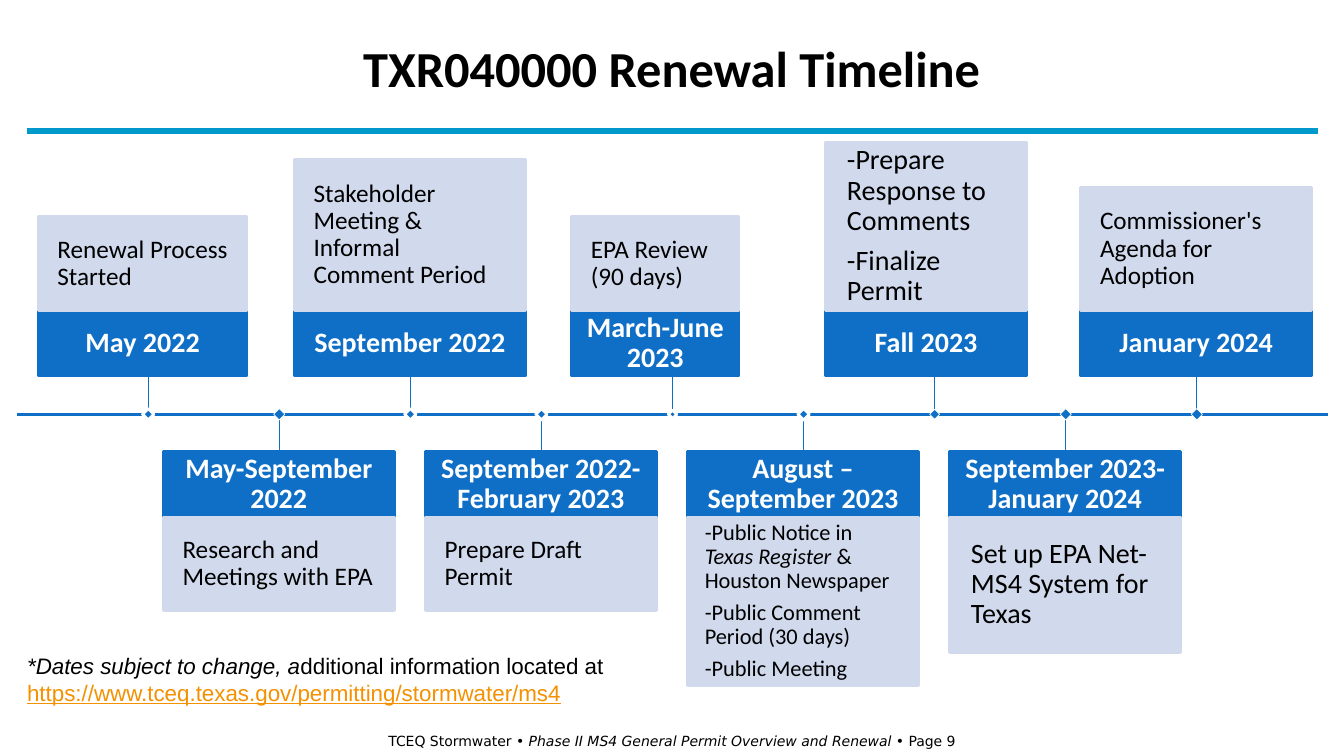
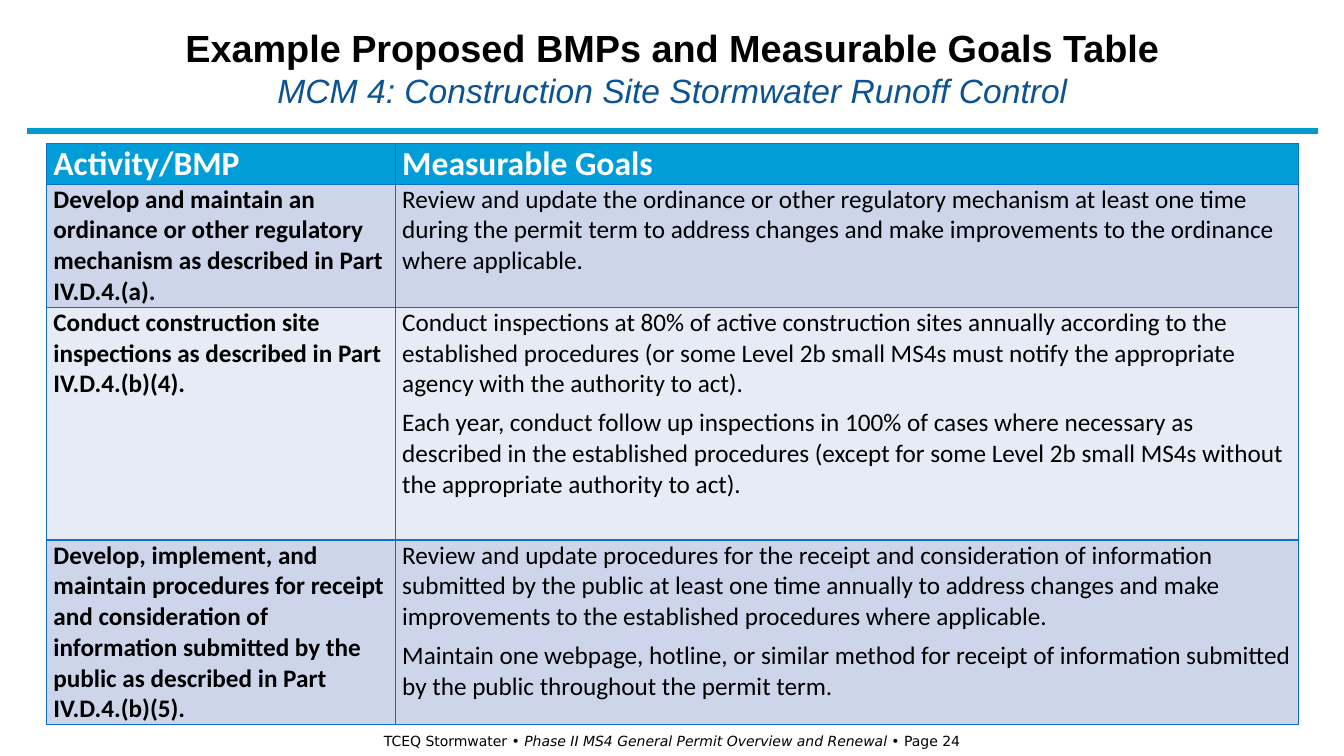
"""Build two stormwater permit slides: a renewal timeline and a goals table."""
from lxml.etree import SubElement
from pptx import Presentation
from pptx.dml.color import RGBColor
from pptx.enum.shapes import MSO_CONNECTOR, MSO_SHAPE
from pptx.enum.text import MSO_ANCHOR, MSO_AUTO_SIZE, PP_ALIGN
from pptx.oxml.ns import qn
from pptx.util import Inches, Pt

HUES = {
    "black": "000000", "white": "FFFFFF", "rule": "0099CC", "blue": "0F6FC6",
    "pale": "D1D9EC", "head": "009DD9", "odd": "CCD5EA", "even": "E7EBF5",
    "navy": "0B5394", "link": "F49100",
}


def hue(name):
    return RGBColor.from_string(HUES[name])


def write(frame, paras, align=PP_ALIGN.LEFT, lead=1.0, after=0, inset=(0.1, 0.05),
          anchor=None, **base):
    frame.word_wrap = True
    frame.auto_size = MSO_AUTO_SIZE.NONE
    frame.margin_left = frame.margin_right = Inches(inset[0])
    frame.margin_top = frame.margin_bottom = Inches(inset[1])
    if anchor is not None:
        frame.vertical_anchor = anchor
    fill(frame, paras, align, lead, after, **base)


def fill(frame, paras, align=PP_ALIGN.LEFT, lead=1.0, after=0, **base):
    for spot, runs in enumerate(paras):
        para = frame.add_paragraph() if spot else frame.paragraphs[0]
        para.alignment, para.line_spacing = align, lead
        para.space_before, para.space_after = Pt(0), Pt(after)
        for item in [runs] if isinstance(runs, str) else runs:
            words, extra = (item, {}) if isinstance(item, str) else item
            look = {"size": 18, "face": "Calibri", "tint": "black", "bold": False,
                    "slant": False, "under": False, **base, **extra}
            run = para.add_run()
            run.text = words
            font = run.font
            font.size, font.name = Pt(look["size"]), look["face"]
            font.bold, font.italic = look["bold"], look["slant"]
            font.underline = look["under"]
            font.color.rgb = hue(look["tint"])


class Deck:
    def __init__(self):
        self.show = Presentation()
        self.show.slide_width, self.show.slide_height = Inches(13.33), Inches(7.5)
        self.slide = None

    def page(self, number, title, left, width, **look):
        self.slide = self.show.slides.add_slide(self.show.slide_layouts[5])
        self.line(0.27, 1.3, 13.07, 1.3, "rule", 4.5)
        self.text(0, 7.22, 13.33, 0.27, [[
            "TCEQ Stormwater • ",
            ("Phase II MS4 General Permit Overview and Renewal ", {"slant": True}),
            f"• Page {number}"]],
            align=PP_ALIGN.CENTER, size=10, face="DejaVu Sans")
        head = self.slide.shapes.title
        head.left, head.top = Inches(left), Inches(0.17)
        head.width, head.height = Inches(width), Inches(1)
        write(head.text_frame, title, align=PP_ALIGN.CENTER,
              anchor=MSO_ANCHOR.MIDDLE, bold=True, **look)

    def text(self, left, top, width, height, paras, **look):
        box = self.slide.shapes.add_textbox(
            Inches(left), Inches(top), Inches(width), Inches(height))
        write(box.text_frame, paras, **look)

    def line(self, left, top, right, low, tint, weight):
        line = self.slide.shapes.add_connector(
            MSO_CONNECTOR.STRAIGHT, Inches(left), Inches(top), Inches(right), Inches(low))
        line.line.color.rgb, line.line.width = hue(tint), Pt(weight)
        SubElement(line._element.spPr, qn("a:effectLst"))

    def rect(self, left, top, width, height, tint, edge, weight=2):
        rect = self.slide.shapes.add_shape(
            MSO_SHAPE.RECTANGLE, Inches(left), Inches(top), Inches(width), Inches(height))
        rect.shadow.inherit = False
        rect.fill.solid()
        rect.fill.fore_color.rgb = hue(tint)
        rect.line.color.rgb, rect.line.width = hue(edge), Pt(weight)
        return rect

    def stage(self, mid, above, date, notes, tall, left=None, width=2.29, size=18):
        left = mid - 1.15 if left is None else left
        bar_top, box_top = (3.08, 3.08 - tall) if above else (4.48, 5.13)
        bar = self.rect(left, bar_top, width, 0.65, "blue", "blue")
        write(bar.text_frame, [date], align=PP_ALIGN.CENTER, lead=0.9, inset=(0.11, 0.11),
              anchor=MSO_ANCHOR.MIDDLE, size=20, tint="white", bold=True)
        box = self.rect(left, box_top, width, tall, "pale", "pale")
        pad = round(size * 0.0105, 2)
        write(box.text_frame, notes, lead=0.9, after=size * 0.35, inset=(pad, pad),
              anchor=MSO_ANCHOR.MIDDLE, size=size)
        ends = (3.73, 4.11) if above else (4.11, 4.48)
        self.line(mid, ends[0], mid, ends[1], "blue", 0.75)

    def node(self, mid, side, weight):
        node = self.rect(mid - side / 2, 4.11 - side / 2, side, side, "blue", "white", weight)
        node.rotation = 45

    def table(self, left, top, wide, tall, rows):
        grid = self.slide.shapes.add_table(
            len(rows), len(wide), Inches(left), Inches(top),
            Inches(sum(wide)), Inches(sum(tall))).table
        for col, width in zip(grid.columns, wide):
            col.width = Inches(width)
        for i, row in enumerate(rows):
            grid.rows[i].height = Inches(tall[i])
            for j, paras in enumerate(row):
                back = "even" if i % 2 == 0 else "odd"
                look = {"bold": j == 0}
                if i == 0:
                    back = "head"
                    look = {"bold": True, "size": 24, "tint": "white"}
                self.cell(grid.cell(i, j), paras, back, **look)

    def cell(self, cell, paras, back, **look):
        cell.margin_left = cell.margin_right = Inches(0.07)
        cell.margin_top = cell.margin_bottom = 0
        props = cell._tc.get_or_add_tcPr()
        for side in ("lnL", "lnR", "lnT", "lnB"):
            edge = SubElement(props, qn(f"a:{side}"), w=str(int(Pt(1))))
            paint = SubElement(edge, qn("a:solidFill"))
            SubElement(paint, qn("a:srgbClr"), val=HUES["blue"])
        cell.fill.solid()
        cell.fill.fore_color.rgb = hue(back)
        fill(cell.text_frame, paras, after=6, **look)


STEPS = [
    ("May 2022", ["Renewal Process Started"], 0.93, {"left": 0.38, "width": 2.07}),
    ("May-September 2022", ["Research and Meetings with EPA"], 0.93, {}),
    ("September 2022", ["Stakeholder Meeting & Informal Comment Period"], 1.5, {}),
    ("September 2022-February 2023", ["Prepare Draft Permit"], 0.93, {}),
    ("March-June 2023", ["EPA Review (90 days)"], 0.93, {"left": 5.67, "width": 1.66}),
    ("August – September 2023",
     [["-Public Notice in ", ("Texas Register", {"slant": True}), " & Houston Newspaper"],
      "-Public Comment Period (30 days)", "-Public Meeting"], 1.67, {"size": 16}),
    ("Fall 2023", ["-Prepare Response to Comments", "-Finalize Permit"], 1.67,
     {"left": 8.19, "width": 1.99, "size": 20}),
    ("September 2023-January 2024", ["Set up EPA Net-MS4 System for Texas"], 1.34,
     {"size": 20}),
    ("January 2024", ["Commissioner's Agenda for Adoption"], 1.22, {}),
]
SIDES = {4: 0.06, 6: 0.07}
THIN = {1, 6, 7, 8}

GOALS = [
    (["Activity/BMP"], ["Measurable Goals"]),
    (["Develop and maintain an ordinance or other regulatory mechanism as described in "
      "Part IV.D.4.(a)."],
     ["Review and update the ordinance or other regulatory mechanism at least one time "
      "during the permit term to address changes and make improvements to the ordinance "
      "where applicable."]),
    (["Conduct construction site inspections as described in Part IV.D.4.(b)(4)."],
     ["Conduct inspections at 80% of active construction sites annually according to the "
      "established procedures (or some Level 2b small MS4s must notify the appropriate "
      "agency with the authority to act).",
      "Each year, conduct follow up inspections in 100% of cases where necessary as "
      "described in the established procedures (except for some Level 2b small MS4s "
      "without the appropriate authority to act)."]),
    (["Develop, implement, and maintain procedures for receipt and consideration of "
      "information submitted by the public as described in Part IV.D.4.(b)(5)."],
     ["Review and update procedures for the receipt and consideration of information "
      "submitted by the public at least one time annually to address changes and make "
      "improvements to the established procedures where applicable.",
      "Maintain one webpage, hotline, or similar method for receipt of information "
      "submitted by the public throughout the permit term."]),
]


def main():
    deck = Deck()
    deck.page(9, ["TXR040000 Renewal Timeline"], 0.93, 11.47, size=36)
    deck.line(0.17, 4.11, 13.17, 4.11, "blue", 2)
    for i, (date, notes, tall, extra) in enumerate(STEPS):
        mid = 1.47 + 1.3 * i
        deck.stage(mid, i % 2 == 0, date, notes, tall, **extra)
        deck.node(mid, SIDES.get(i, 0.08), 0.5 if i in THIN else 2)
    deck.text(0.17, 6.42, 8.28, 0.64, [[
        ("*Dates subject to change, a", {"slant": True}),
        "dditional information located at ",
        ("https://www.tceq.texas.gov/permitting/stormwater/ms4",
         {"tint": "link", "under": True})]], size=16, face="Arial")

    deck.page(24, [
        "Example Proposed BMPs and Measurable Goals Table",
        [("MCM 4: Construction Site Stormwater Runoff Control",
          {"size": 24, "tint": "navy", "bold": False, "slant": True})]],
        -0.09, 13.52, size=27, face="Arial")
    deck.table(0.46, 1.42, [3.46, 8.96], [0.4, 1.22, 2.31, 1.83], GOALS)
    deck.show.save("out.pptx")


if __name__ == "__main__":
    main()
